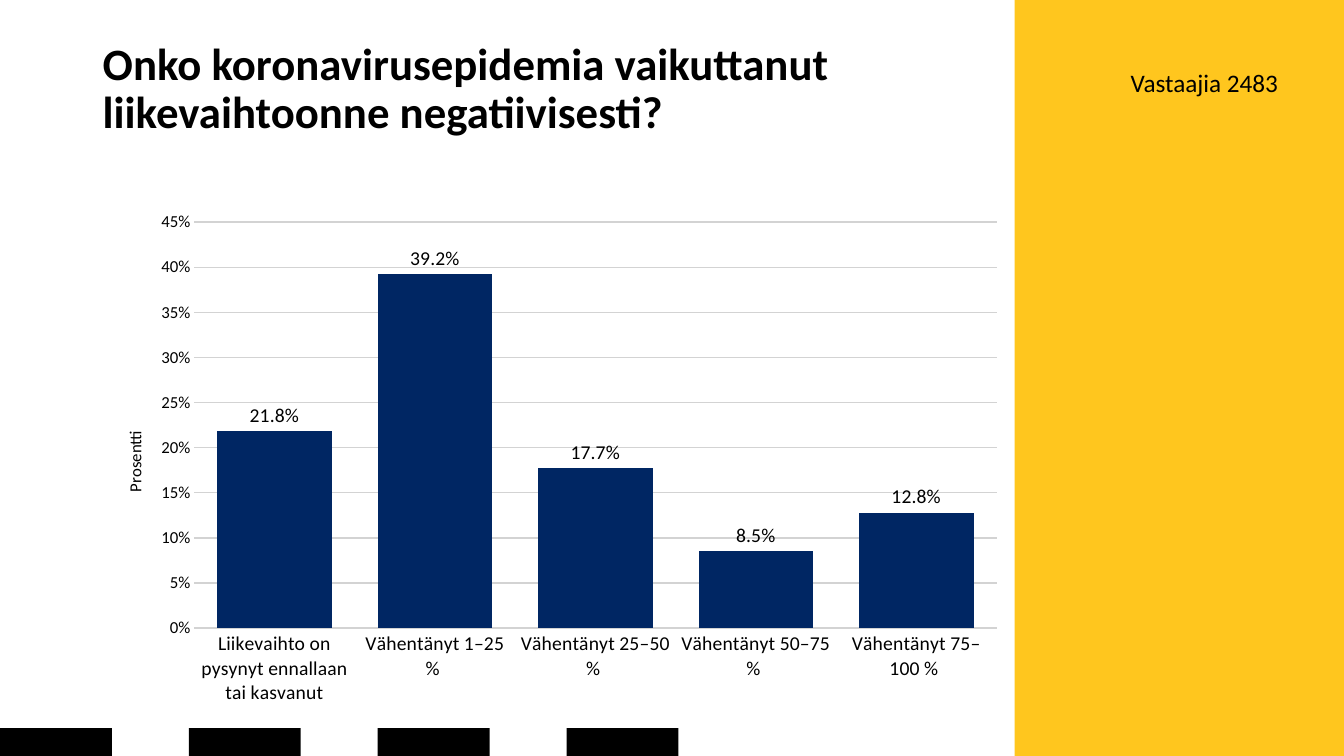
import pptx
import pptx.chart.data
import pptx.dml.color
import pptx.enum.chart
import pptx.enum.shapes
import pptx.enum.text
import pptx.oxml
import pptx.oxml.ns
import pptx.util
from pptx.util import Cm

# Content
TITLE = "Onko koronavirusepidemia vaikuttanut liikevaihtoonne negatiivisesti?"
RESPONDENTS = "Vastaajia 2483"
AXIS_TITLE = "Prosentti"
REVENUE_CHANGE = [
    ("Liikevaihto on pysynyt ennallaan tai kasvanut", 0.218),
    ("Vähentänyt 1–25 % ", 0.392),
    ("Vähentänyt 25–50 % ", 0.177),
    ("Vähentänyt 50–75 % ", 0.085),
    ("Vähentänyt 75–100 % ", 0.128),
]
FONT = "Calibri"
BLACK, WHITE, YELLOW, NAVY, GREY = "000000", "FFFFFF", "FFC61E", "002663", "D3D3D3"
SLIDE_W, SLIDE_H = 33.87, 19.05
PANEL_X = 25.57
LEFT = 2.34
DASH_COUNT, DASH_W, DASH_H, DASH_STEP = 4, 2.82, 0.7, 4.76


def rgb(value):
    return pptx.dml.color.RGBColor.from_string(value)


def set_font(font, size, color=BLACK, bold=False):
    font.name, font.size, font.bold = FONT, pptx.util.Pt(size), bold
    font.color.rgb = rgb(color)


def add_block(s, x, y, w, h, color):
    sp = s.shapes.add_shape(pptx.enum.shapes.MSO_SHAPE.RECTANGLE, Cm(x), Cm(y), Cm(w), Cm(h))
    sp.shadow.inherit = False
    sp.fill.solid()
    sp.fill.fore_color.rgb = rgb(color)
    sp.line.fill.background()


def add_text(s, text, x, y, w, h, size, bold=False, align="LEFT", anchor="TOP", spacing=1.0):
    tf = s.shapes.add_textbox(Cm(x), Cm(y), Cm(w), Cm(h)).text_frame
    tf.word_wrap = True
    tf.vertical_anchor = pptx.enum.text.MSO_ANCHOR[anchor]
    p = tf.paragraphs[0]
    p.alignment = pptx.enum.text.PP_ALIGN[align]
    p.line_spacing = spacing
    r = p.add_run()
    r.text = text
    set_font(r.font, size, bold=bold)


def place(parent, index, **settings):
    """Set a manual layout, as fractions of the chart, on a chart element."""
    old = parent.find(pptx.oxml.ns.qn("c:layout"))
    if old is not None:
        parent.remove(old)
    items = "".join(f'<c:{key} val="{value}"/>' for key, value in settings.items())
    parent.insert(index, pptx.oxml.parse_xml(
        f'<c:layout {pptx.oxml.ns.nsdecls("c")}><c:manualLayout>{items}</c:manualLayout></c:layout>'))


prs = pptx.Presentation()
prs.slide_width, prs.slide_height = Cm(SLIDE_W), Cm(SLIDE_H)
s = prs.slides.add_slide(prs.slide_layouts[6])

# Side panel and bottom dashes
add_block(s, PANEL_X, 0, SLIDE_W - PANEL_X, SLIDE_H, YELLOW)
for i in range(DASH_COUNT):
    add_block(s, i * DASH_STEP, SLIDE_H - DASH_H, DASH_W, DASH_H, BLACK)

# Texts
add_text(s, TITLE, LEFT, 1.02, 23.44, 2.51, 32, bold=True, anchor="MIDDLE", spacing=0.9)
add_text(s, RESPONDENTS, 27.2, 1.57, 5.26, 1.02, 18, align="RIGHT")

# Column chart
data = pptx.chart.data.CategoryChartData()
data.categories = [name for name, share in REVENUE_CHANGE]
data.add_series("Series 1", [share for name, share in REVENUE_CHANGE])
chart = s.shapes.add_chart(pptx.enum.chart.XL_CHART_TYPE.COLUMN_CLUSTERED,
                           Cm(LEFT), Cm(5.08), Cm(23.24), Cm(12.95), data).chart
chart.has_legend = chart.has_title = False
set_font(chart.font, 11)

plot = chart.plots[0]
plot.gap_width = 40
plot.vary_by_categories = False
series = plot.series[0]
series.format.fill.solid()
series.format.fill.fore_color.rgb = rgb(NAVY)
labels = series.data_labels
labels.show_value = True
labels.number_format, labels.number_format_is_linked = "0.0%", False
labels.position = pptx.enum.chart.XL_LABEL_POSITION.OUTSIDE_END
set_font(labels.font, 14)

# Axes
for axis, size in ((chart.category_axis, 14), (chart.value_axis, 12)):
    axis.major_tick_mark = pptx.enum.chart.XL_TICK_MARK.INSIDE
    axis.minor_tick_mark = pptx.enum.chart.XL_TICK_MARK.NONE
    axis.format.line.fill.background()
    set_font(axis.tick_labels.font, size)
axis = chart.value_axis
axis.minimum_scale, axis.maximum_scale, axis.major_unit = 0, 0.45, 0.05
axis.tick_labels.number_format = "0%"
axis.tick_labels.number_format_is_linked = False
axis.has_major_gridlines = True
axis.major_gridlines.format.line.color.rgb = rgb(GREY)
axis.major_gridlines.format.line.width = pptx.util.Pt(1)
tf = axis.axis_title.text_frame
r = tf.paragraphs[0].add_run()
r.text = AXIS_TITLE
set_font(r.font, 12)
body = tf._txBody.find(pptx.oxml.ns.qn("a:bodyPr"))
body.set("rot", "-5400000")
body.set("vert", "horz")

# Plot area and axis title positions
place(axis.axis_title._element, 1, xMode="edge", yMode="edge", x=0.03, y=0.44)
plot_area = chart._chartSpace.chart.plotArea
place(plot_area, 0, layoutTarget="inner", xMode="edge", yMode="edge",
      x=0.11, y=0.04, w=0.87, h=0.79)
plot_area.append(pptx.oxml.parse_xml(
    f'<c:spPr {pptx.oxml.ns.nsdecls("c", "a")}><a:solidFill><a:srgbClr val="{WHITE}"/>'
    '</a:solidFill></c:spPr>'))

prs.save("out.pptx")
